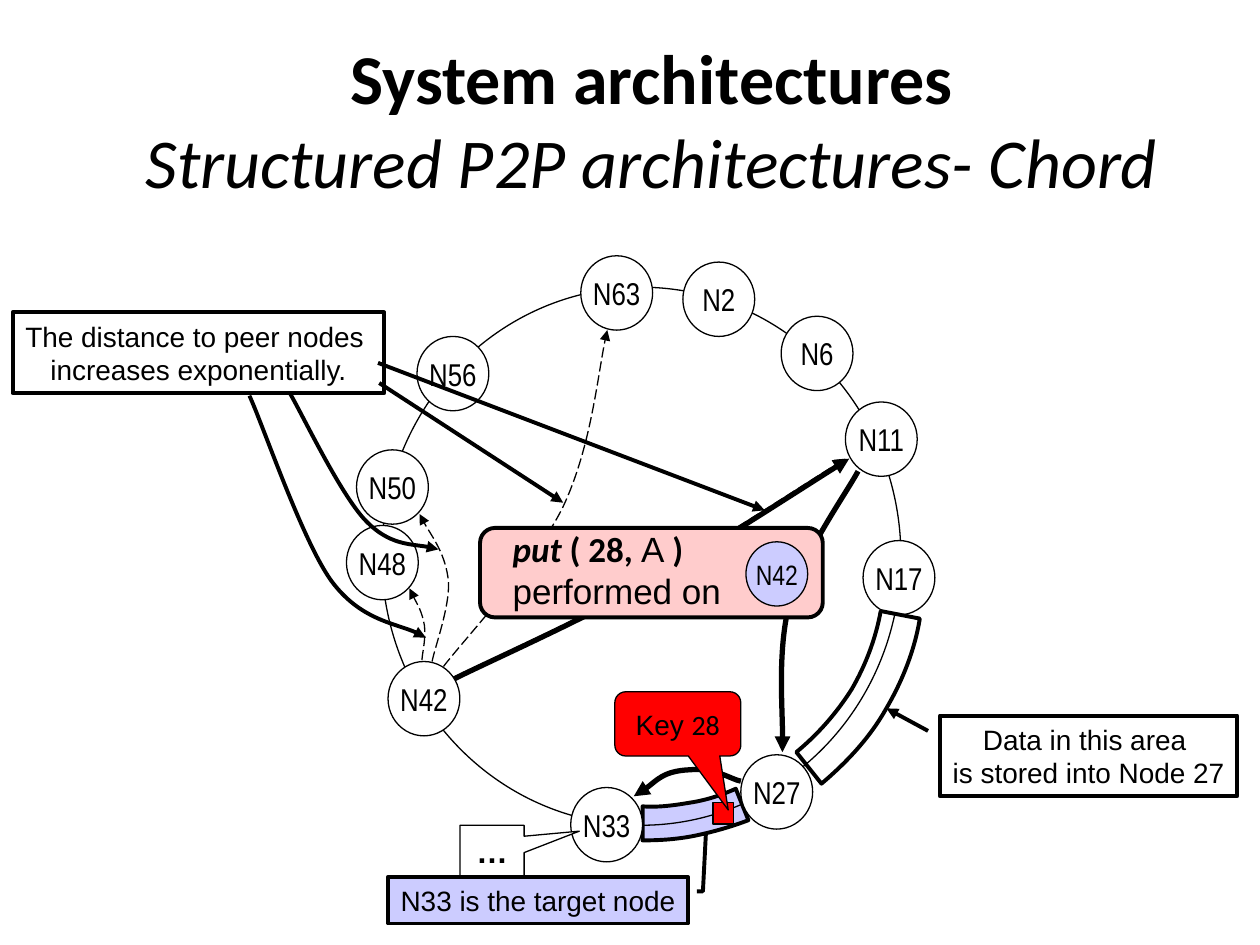
from lxml import etree
from pptx import Presentation
from pptx.dml.color import RGBColor
from pptx.enum.dml import MSO_LINE
from pptx.enum.shapes import MSO_CONNECTOR, MSO_SHAPE
from pptx.enum.text import MSO_ANCHOR, MSO_AUTO_SIZE, PP_ALIGN
from pptx.oxml.ns import qn
from pptx.util import Inches, Pt

OVAL = MSO_SHAPE.OVAL
RECT = MSO_SHAPE.RECTANGLE
ROUNDED = MSO_SHAPE.ROUNDED_RECTANGLE
RECT_CALLOUT = MSO_SHAPE.RECTANGULAR_CALLOUT
ROUNDED_CALLOUT = MSO_SHAPE.ROUNDED_RECTANGULAR_CALLOUT
LINE_CALLOUT = MSO_SHAPE.LINE_CALLOUT_1
BENT_CALLOUT = MSO_SHAPE.LINE_CALLOUT_2
DASH = MSO_LINE.LONG_DASH
STRAIGHT = MSO_CONNECTOR.STRAIGHT
CENTER, LEFT = PP_ALIGN.CENTER, PP_ALIGN.LEFT
MIDDLE, TOP = MSO_ANCHOR.MIDDLE, MSO_ANCHOR.TOP
NO_AUTOFIT = MSO_AUTO_SIZE.NONE

COLORS = {"ink": "000000", "paper": "FFFFFF", "lilac": "CCCCFF",
          "pink": "FFCCCC", "red": "FF0000"}
THIN, MEDIUM, THICK = 0.75, 2.25, 3
NODE_SIZE = (0.57, 0.59)


def color(name):
    return RGBColor.from_string(COLORS[name])


class ChordSlide:
    def __init__(self, slide):
        self.slide = slide
        self.shapes = slide.shapes

    def format_runs(self, paragraph, styles, size):
        for run, (font, bold, italic) in zip(paragraph.runs, styles):
            run.font.name = font
            run.font.size = Pt(size)
            run.font.bold = bold
            run.font.italic = italic
            run.font.color.rgb = color("ink")

    def title(self, heading, subheading, box):
        title = self.shapes.title
        title.left, title.top, title.width, title.height = map(Inches, box)
        frame = title.text_frame
        frame.auto_size = NO_AUTOFIT
        frame.vertical_anchor = TOP
        frame.text = heading + "\v" + subheading
        frame.paragraphs[0].alignment = CENTER
        self.format_runs(frame.paragraphs[0],
                         [("Calibri", True, False), ("Calibri", False, True)], 40)

    def outline(self, shape, width, arrow=False, dash=None):
        shape.line.color.rgb = color("ink")
        shape.line.width = Pt(width)
        if dash:
            shape.line.dash_style = dash
        if arrow:
            line = shape._element.spPr.find(qn("a:ln"))
            etree.SubElement(line, qn("a:tailEnd"), type="triangle")

    def paint(self, shape, fill):
        shape.shadow.inherit = False
        if fill:
            shape.fill.solid()
            shape.fill.fore_color.rgb = color(fill)
        else:
            shape.fill.background()

    def shape(self, kind, box, fill=None, width=THIN, adjustments=(), arrow=False):
        shape = self.shapes.add_shape(kind, *map(Inches, box))
        for index, value in enumerate(adjustments):
            shape.adjustments[index] = value
        self.paint(shape, fill)
        self.outline(shape, width, arrow)
        return shape

    def label(self, shape, text, size=16, font="Arial", bold=False,
              anchor=MIDDLE, inset=True):
        frame = shape.text_frame
        frame.word_wrap = False
        frame.vertical_anchor = anchor
        if not inset:
            frame.margin_left = frame.margin_right = 0
            frame.margin_top = frame.margin_bottom = 0
        frame.text = text
        paragraph = frame.paragraphs[0]
        paragraph.alignment = CENTER
        self.format_runs(paragraph, [(font, bold, False)] * len(paragraph.runs), size)

    def rich_text(self, shape, lines, size, alignment=CENTER):
        frame = shape.text_frame
        frame.word_wrap = False
        for index, pieces in enumerate(lines):
            paragraph = frame.add_paragraph() if index else frame.paragraphs[0]
            paragraph.alignment = alignment
            for text, *_ in pieces:
                paragraph.add_run().text = text
            self.format_runs(paragraph, [style for _, *style in pieces], size)

    def node(self, name, left, top, size=NODE_SIZE, fill="paper", font_size=18):
        oval = self.shape(OVAL, (left, top, *size), fill)
        self.label(oval, name, font_size, "Arial Narrow", inset=False)

    def curve(self, start, segments, width, fill=None, closed=False, dash=None):
        points = [point for segment in segments for point in segment]
        builder = self.shapes.build_freeform(*map(Inches, start))
        builder.add_line_segments([(Inches(x), Inches(y)) for x, y in points], closed)
        shape = builder.convert_to_shape()
        steps = iter(list(shape._element.iter(qn("a:lnTo"))))
        for segment in segments:
            group = [next(steps) for _ in segment]
            if len(group) == 3:
                bezier = etree.Element(qn("a:cubicBezTo"))
                group[0].addprevious(bezier)
                for step in group:
                    bezier.append(step[0])
                    step.getparent().remove(step)
        self.paint(shape, fill)
        self.outline(shape, width, not closed, dash)

    def arrow(self, start, end):
        line = self.shapes.add_connector(STRAIGHT, *map(Inches, start + end))
        self.outline(line, MEDIUM, True)
        etree.SubElement(line._element.spPr, qn("a:effectLst"))


def main():
    deck = Presentation()
    deck.slide_width, deck.slide_height = Inches(10), Inches(7.5)
    chord = ChordSlide(deck.slides.add_slide(deck.slide_layouts[5]))
    chord.title("System architectures", "Structured P2P architectures- Chord",
                (0.67, 0.22, 9, 1.25))

    chord.curve((5.84, 6.26), [
        [(5.73, 6.31), (5.61, 6.35), (5.48, 6.37)],
        [(5.36, 6.39), (5.23, 6.41), (5.1, 6.4)],
        [(5.1, 6.67)],
        [(5.25, 6.67), (5.39, 6.66), (5.53, 6.63)],
        [(5.67, 6.6), (5.81, 6.56), (5.94, 6.51)]], MEDIUM, "lilac", closed=True)

    lookup = [[(3.86, 5.26), (4.58, 4.94), (5.1, 4.65)],
              [(5.64, 4.35), (6.4, 3.85), (6.74, 3.64)]]
    for shift, width, dash in [(0, THICK, None), (-0.03, THIN, DASH)]:
        chord.curve((3.6 + shift, 5.39),
                    [[(x + shift, y) for x, y in part] for part in lookup],
                    width, dash=dash)

    chord.shape(OVAL, (3.03, 2.28, 4.12, 4.27))
    for name, left, top in [
            ("N42", 3.08, 5.25), ("N27", 5.88, 5.99), ("N11", 6.71, 3.19),
            ("N2", 5.42, 2.08), ("N56", 3.31, 2.67), ("N50", 2.83, 3.57),
            ("N17", 6.85, 4.29), ("N63", 4.61, 2.03), ("N48", 2.75, 4.17),
            ("N6", 6.2, 2.51), ("N33", 4.53, 6.25)]:
        chord.node(name, left, top)

    fingers = [
        ((3.35, 5.24), [[(3.35, 5.19), (3.38, 5.09), (3.37, 4.97)],
                        [(3.35, 4.85), (3.28, 4.74), (3.25, 4.67)]]),
        ((3.43, 5.25), [[(3.45, 5.14), (3.57, 4.82), (3.56, 4.62)],
                        [(3.54, 4.4), (3.38, 4.19), (3.33, 4.08)]]),
        ((3.52, 5.29), [[(3.68, 5.08), (4.25, 4.47), (4.47, 4.02)],
                        [(4.69, 3.55), (4.75, 2.91), (4.82, 2.62)]])]
    for start, segments in fingers:
        chord.curve(start, segments, THIN, dash=DASH)

    hops = [
        ((6.81, 3.74), [[(6.72, 3.91), (6.37, 4.4), (6.27, 4.77)],
                        [(6.17, 5.15), (6.22, 5.72), (6.21, 5.97)]]),
        ((5.88, 6.2), [[(5.81, 6.19), (5.68, 6.09), (5.47, 6.11)],
                       [(5.26, 6.12), (5.12, 6.28), (5.03, 6.32)]])]
    for start, segments in hops:
        chord.curve(start, segments, THICK)

    ellipsis = chord.shape(RECT_CALLOUT, (3.65, 6.55, 0.51, 0.52), "paper",
                           adjustments=(1.36, -0.41))
    chord.label(ellipsis, "…", 18, bold=True, anchor=TOP)

    chord.shape(ROUNDED, (3.81, 4.19, 2.72, 0.71), "pink", MEDIUM)
    operation = chord.shapes.add_textbox(*map(Inches, (3.97, 4.14, 1.96, 0.77)))
    chord.rich_text(operation, [
        [("put ", "Calibri", True, True), ("( 28, ", "Calibri", True, False),
         ("A ", "Arial", False, False), (")", "Calibri", True, False)],
        [("performed on", "Arial", False, False)]], 20, LEFT)
    chord.node("N42", 5.92, 4.3, (0.49, 0.51), "lilac", 16)

    target = chord.shape(BENT_CALLOUT, (3.08, 6.96, 2.38, 0.37), "lilac", MEDIUM,
                         (0.31, 1.03, 0.31, 1.05, -0.93, 1.06))
    chord.label(target, "N33 is the target node")

    chord.shape(RECT, (5.66, 6.37, 0.16, 0.17), "red")
    key = chord.shape(ROUNDED_CALLOUT, (4.88, 5.49, 1, 0.51), "red",
                      adjustments=(0.4, 1.34, 0.17))
    chord.rich_text(key, [[("Key ", "Arial", False, False),
                           ("28", "Calibri", False, False)]], 16)

    chord.curve((6.99, 4.85), [
        [(6.95, 5.07), (6.87, 5.28), (6.76, 5.47)],
        [(6.64, 5.66), (6.49, 5.83), (6.32, 5.97)],
        [(6.52, 6.22)],
        [(6.72, 6.05), (6.9, 5.86), (7.03, 5.63)],
        [(7.16, 5.41), (7.26, 5.16), (7.3, 4.91)]], MEDIUM, closed=True)
    storage = chord.shape(LINE_CALLOUT, (7.46, 5.68, 2.36, 0.64), "paper", MEDIUM,
                          (0.19, -0.04, -0.09, -0.18), arrow=True)
    chord.label(storage, "Data in this area \vis stored into Node 27")

    distance = chord.shape(RECT, (0.1, 2.48, 2.95, 0.64), "paper", MEDIUM)
    chord.label(distance, "The distance to peer nodes \vincreases exponentially.")
    chord.arrow((3, 2.88), (6.07, 4.05))
    chord.arrow((3.01, 3.04), (4.47, 3.99))
    chord.curve((1.98, 3.14), [[(2.09, 3.38), (2.4, 4.29), (2.63, 4.61)],
                               [(2.86, 4.92), (3.23, 4.96), (3.38, 5.06)]], MEDIUM)
    chord.curve((2.3, 3.12), [[(2.4, 3.29), (2.7, 3.92), (2.9, 4.13)],
                              [(3.09, 4.33), (3.36, 4.32), (3.48, 4.36)]], MEDIUM)
    deck.save("out.pptx")


if __name__ == "__main__":
    main()
